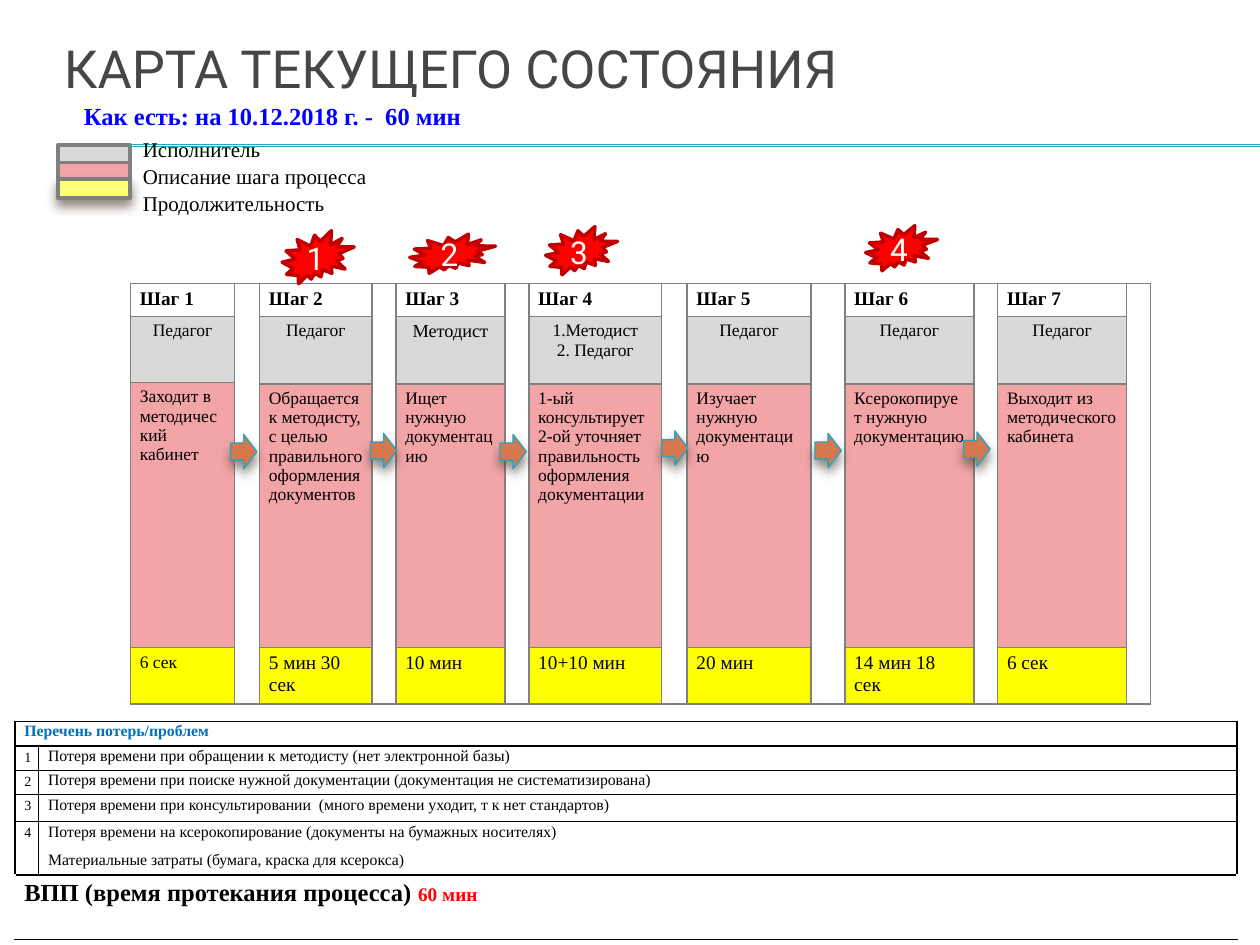
from dataclasses import dataclass
from lxml.etree import SubElement
from pptx import Presentation
from pptx.dml.color import RGBColor
from pptx.enum.shapes import MSO_CONNECTOR, MSO_SHAPE as Kind
from pptx.enum.text import MSO_ANCHOR as Anchor, PP_ALIGN as Align
from pptx.oxml.ns import qn
from pptx.util import Cm, Pt

SERIF = "Times New Roman"
GREY, PINK, TEAL = "D9D9D9", "F2A4A7", "2DA2BF"
PLAIN = "{2D5ABB26-0587-4C30-8999-92F81FD0307C}"


@dataclass
class Step:
    who: tuple[str, ...]
    task: str
    time: str
    who_size: float = 10
    time_size: float = 11


@dataclass
class Box:
    x: float
    y: float
    w: float
    h: float
    fill: str = "FF0000"
    label: str = ""


STEPS = [
    Step(("Педагог",), "Заходит в методический кабинет", "6 сек", time_size=10),
    Step(("Педагог",), "Обращается к методисту, с целью правильного оформления документов",
         "5 мин 30 сек"),
    Step(("Методист",), "Ищет нужную документацию", "10 мин", who_size=10.5),
    Step(("1.Методист", "2. Педагог"),
         "1-ый консультирует  2-ой уточняет правильность оформления документации", "10+10 мин"),
    Step(("Педагог",), "Изучает нужную документацию", "20 мин"),
    Step(("Педагог",), "Ксерокопирует нужную документацию", "14 мин 18 сек"),
    Step(("Педагог",), "Выходит из методического кабинета", "6 сек"),
]
KEYS = [
    ("Исполнитель", Box(1.17, 2.92, 1.45, 0.36, GREY)),
    ("Описание шага процесса", Box(1.17, 3.28, 1.45, 0.36, PINK)),
    ("Продолжительность", Box(1.17, 3.61, 1.45, 0.38, "FFFF79")),
]
MARKS = [
    Box(5.69, 4.65, 1.45, 1.07, label="1"),
    Box(8.26, 4.72, 1.73, 0.79, label="2"),
    Box(11, 4.57, 1.45, 0.97, label="3"),
    Box(17.45, 4.55, 1.45, 0.91, label="4"),
]
ARROWS = [(4.65, 8.76), (7.47, 8.74), (10.08, 8.76), (13.34, 8.69), (16.43, 8.74), (19.43, 8.71)]
LOSSES = [
    ("Потеря времени при обращении к методисту (нет электронной базы)",),
    ("Потеря времени при поиске нужной документации (документация не систематизирована)",),
    ("Потеря времени при консультировании  (много времени уходит, т к нет стандартов)",),
    ("Потеря времени на ксерокопирование (документы на бумажных носителях)",
     "Материальные затраты (бумага, краска для ксерокса)"),
]


def rgb(code: str) -> RGBColor:
    return RGBColor.from_string(code)


def write(frame, *lines: str, size=10, font=SERIF, ink="000000", bold=False,
          align=None, lead=None, gap=0, join=False) -> None:
    for i, line in enumerate(lines):
        para = frame.add_paragraph() if i else frame.paragraphs[0]
        if not join:
            para.alignment = align
            para.space_before = Pt(gap if i else 0)
            if lead:
                para.line_spacing = Pt(lead)
        run = para.add_run()
        run.text = line
        run.font.size, run.font.name, run.font.bold = Pt(size), font, bold
        run.font.color.rgb = rgb(ink)


def edge(cell, tints: dict[str, str]) -> None:
    props = cell._tc.get_or_add_tcPr()
    for i, side in enumerate("LRTB"):
        line = props.makeelement(qn("a:ln" + side), {"w": str(Pt(1))})
        props.insert(i, line)
        fill = SubElement(line, qn("a:solidFill"))
        SubElement(fill, qn("a:srgbClr"), val=tints[side])


def grid(slide, x: float, y: float, cols: list[float], rows: list[float], rim="", pad=0.19):
    shape = slide.shapes.add_table(len(rows), len(cols), Cm(x), Cm(y), Cm(sum(cols)), Cm(sum(rows)))
    table = shape.table
    table.first_row = table.horz_banding = False
    table._tbl.tblPr.find(qn("a:tableStyleId")).text = PLAIN
    for col, w in zip(table.columns, cols):
        col.width = Cm(w)
    for row, h in zip(table.rows, rows):
        row.height = Cm(h)
    for cell in table.iter_cells():
        cell.margin_left = cell.margin_right = Cm(pad)
        cell.margin_top = cell.margin_bottom = Cm(0.1 if pad else 0)
        SubElement(cell.text_frame.paragraphs[0]._p, qn("a:endParaRPr"), sz="100")
        if rim:
            edge(cell, dict.fromkeys("LRTB", rim))
    return table


def paint(cell, tint: str) -> None:
    cell.fill.solid()
    cell.fill.fore_color.rgb = rgb(tint)


def draw(slide, kind: Kind, box: Box, rim: str, width: float, shade=False) -> None:
    shape = slide.shapes.add_shape(kind, Cm(box.x), Cm(box.y), Cm(box.w), Cm(box.h))
    shape.shadow.inherit = False
    paint(shape, box.fill)
    shape.line.color.rgb, shape.line.width = rgb(rim), Pt(width)
    if shade:
        glow = SubElement(shape._element.spPr.find(qn("a:effectLst")), qn("a:outerShdw"),
                          blurRad=str(Pt(6)), dist=str(Pt(4)), dir="5400000", rotWithShape="0")
        tint = SubElement(glow, qn("a:srgbClr"), val="4E3B30")
        SubElement(tint, qn("a:alpha"), val="60000")
    if box.label:
        frame = shape.text_frame
        frame.margin_left = frame.margin_right = 0
        frame.vertical_anchor = Anchor.MIDDLE
        write(frame, box.label, size=18, font="Roboto", ink="FFFFFF", align=Align.CENTER)


def head(slide) -> None:
    for y in (2.92, 2.95):
        line = slide.shapes.add_connector(MSO_CONNECTOR.STRAIGHT, Cm(1.42), Cm(y), Cm(25.4), Cm(y))
        line.line.color.rgb, line.line.width = rgb(TEAL), Pt(0.75)
        SubElement(line._element.spPr, qn("a:effectLst"))
    frame = slide.shapes.add_textbox(Cm(1.04), Cm(0.84), Cm(21.9), Cm(1.04)).text_frame
    frame.word_wrap, frame.vertical_anchor = True, Anchor.MIDDLE
    write(frame, "КАРТА ТЕКУЩЕГО СОСТОЯНИЯ", size=30, font="Roboto", ink="464646")
    table = grid(slide, 1.5, 1.98, [23.85], [0.79])
    write(table.cell(0, 0).text_frame, "Как есть: на 10.12.2018 г. -  60 мин",
          size=14, ink="0000FF", bold=True)


def legend(slide) -> None:
    table = grid(slide, 1.19, 2.92, [1.5, 5.61, 2.03, 13.39], [0.54] * 3)
    table.cell(0, 2).merge(table.cell(2, 2))
    for i, (name, box) in enumerate(KEYS):
        write(table.cell(i, 1).text_frame, name, size=12, lead=7)
        draw(slide, Kind.RECTANGLE, box, "808080", 2, shade=i == 2)


def flow(slide) -> None:
    cols = [2.1, 0.5, 2.27, 0.48, 2.2, 0.47, 2.68, 0.51, 2.5, 0.68, 2.6, 0.47, 2.6, 0.48]
    table = grid(slide, 2.63, 5.71, cols, [0.62, 1.33, 0.03, 5.32, 1.11], rim="808080")
    for i, step in enumerate(STEPS):
        c = 2 * i
        table.cell(0, c + 1).merge(table.cell(4, c + 1))
        top = 1 if i else 2
        table.cell(top, c).merge(table.cell(top + 1, c))
        name, who, task, time = [table.cell(r, c) for r in (0, 1, 3 if i else 2, 4)]
        for cell, tint in zip((name, who, task, time), ("FFFFFF", GREY, PINK, "FFFF00")):
            paint(cell, tint)
        write(name.text_frame, f"Шаг {i + 1}", size=11, bold=True)
        write(who.text_frame, *step.who, size=step.who_size, align=Align.CENTER)
        write(task.text_frame, step.task)
        write(time.text_frame, step.time, size=step.time_size)
    for mark in MARKS:
        draw(slide, Kind.EXPLOSION2, mark, "C00000", 2)
    for x, y in ARROWS:
        draw(slide, Kind.RIGHT_ARROW, Box(x, y, 0.53, 0.69, "D6784E"), TEAL, 0.79, shade=True)


def losses(slide) -> None:
    rows = [0.5, 0.49, 0.49, 0.54, 1.08, 1.3, 1.3]
    table = grid(slide, 0.3, 14.54, [0.47, 24.16], rows, rim="000000")
    for r in (0, 5, 6):
        table.cell(r, 0).merge(table.cell(r, 1))
    for r, base in ((5, "000000"), (6, "FFFFFF")):
        for c in (0, 1):
            cell = table.cell(r, c)
            props = cell._tc.tcPr
            for line in list(props):
                props.remove(line)
            edge(cell, {"L": "FFFFFF", "R": "FFFFFF", "T": "000000", "B": base})
    write(table.cell(0, 0).text_frame, "Перечень потерь/проблем",
          size=9, ink="0070C0", bold=True, lead=8)
    for i, lines in enumerate(LOSSES, 1):
        write(table.cell(i, 0).text_frame, str(i), size=8, lead=8)
        write(table.cell(i, 1).text_frame, *lines, size=9, lead=8, gap=8)
    total = table.cell(5, 0).text_frame
    write(total, "ВПП (время протекания процесса) ", size=14, bold=True)
    write(total, "60 мин", size=11, ink="FF0000", bold=True, join=True)


def main() -> None:
    """Build the process map slide."""
    deck = Presentation()
    deck.slide_width, deck.slide_height = Cm(25.4), Cm(19.05)
    slide = deck.slides.add_slide(deck.slide_layouts[6])
    for part in (head, legend, flow, losses):
        part(slide)
    deck.save("out.pptx")


if __name__ == "__main__":
    main()
